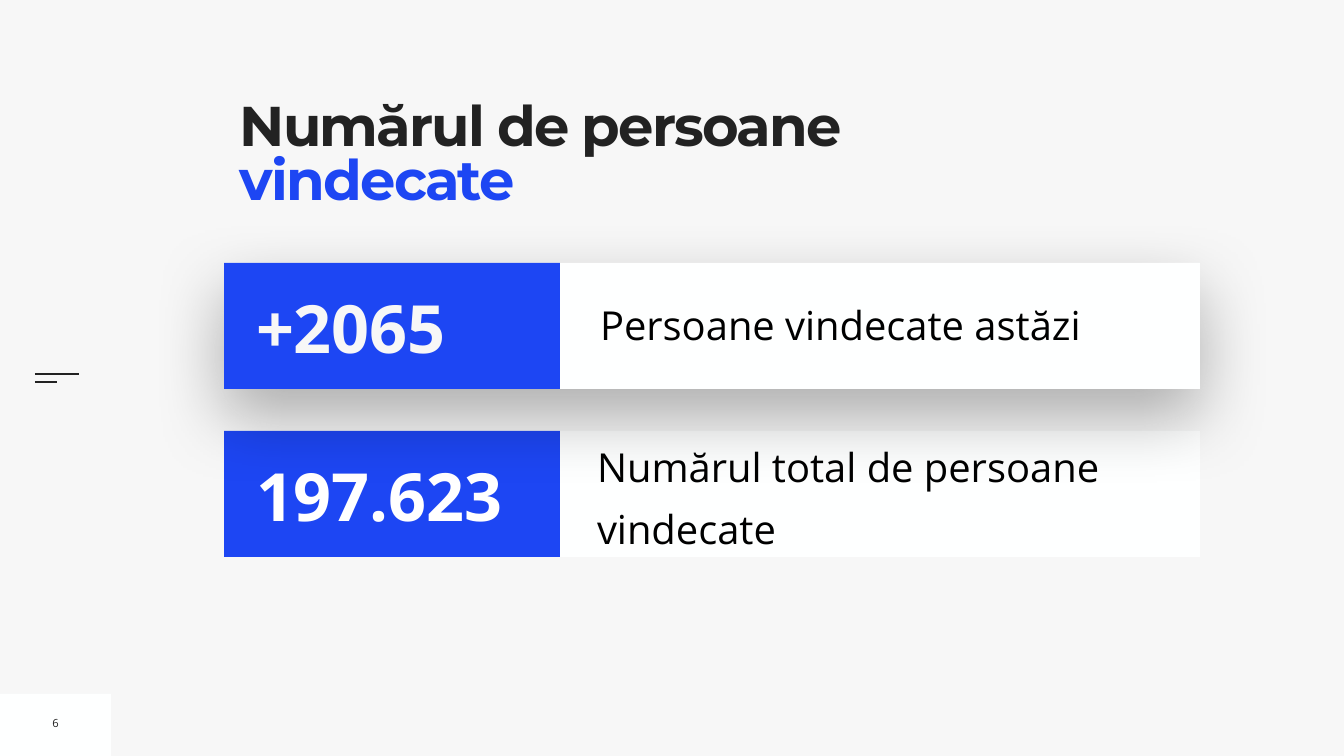
import pptx
import pptx.dml.color
import pptx.enum.shapes
import pptx.enum.text
import pptx.oxml
import pptx.oxml.ns
import pptx.util

SCALE = 914400 / 50.4
COLORS = {
    "background": "F7F7F7",
    "white": "FEFFFF",
    "number": "FFFFFF",
    "ink": "222222",
    "label": "000000",
    "accent": "1D46F3",
}
CARD_LEFT, CARD_WIDTH, CARD_HEIGHT, NUMBER_WIDTH = 224, 976, 126, 336


def px(length):
    """Turn pixels into EMU."""
    return pptx.util.Emu(round(length * SCALE))


def rgb(name):
    """Look up a named colour."""
    return pptx.dml.color.RGBColor.from_string(COLORS[name])


def add_panel(page, left, top, width, height, color):
    """Add a plain filled rectangle."""
    panel = page.shapes.add_shape(
        pptx.enum.shapes.MSO_SHAPE.RECTANGLE, px(left), px(top), px(width), px(height)
    )
    panel.shadow.inherit = False
    panel.fill.solid()
    panel.fill.fore_color.rgb = rgb(color)
    panel.line.fill.background()
    return panel


def add_soft_shadow(panel):
    """Give a panel a wide, soft shadow below it."""
    effects = panel._element.spPr.find(pptx.oxml.ns.qn("a:effectLst"))
    effects.append(pptx.oxml.parse_xml(
        f'<a:outerShdw {pptx.oxml.ns.nsdecls("a")} blurRad="{pptx.util.Pt(100)}" '
        f'dist="{pptx.util.Pt(40)}" dir="5400000" algn="ctr" rotWithShape="0">'
        '<a:srgbClr val="000000"><a:alpha val="30000"/></a:srgbClr></a:outerShdw>'
    ))


def add_rule(page, left, right, y):
    """Add a thin horizontal line."""
    rule = page.shapes.add_connector(
        pptx.enum.shapes.MSO_CONNECTOR.STRAIGHT, px(left), px(y), px(right), px(y)
    )
    rule.line.color.rgb = rgb("ink")
    rule.line.width = pptx.util.Pt(3)
    rule._element.spPr.append(
        pptx.oxml.parse_xml(f'<a:effectLst {pptx.oxml.ns.nsdecls("a")}/>')
    )


def add_text(page, left, top, width, height, text, size, color, bold=False, inset=5, wrap=True):
    """Add a vertically centred text box and return its paragraph."""
    box = page.shapes.add_textbox(px(left), px(top), px(width), px(height))
    frame = box.text_frame
    frame.word_wrap = wrap
    frame.vertical_anchor = pptx.enum.text.MSO_ANCHOR.MIDDLE
    frame.margin_left = frame.margin_right = px(inset)
    frame.margin_top = frame.margin_bottom = px(inset)
    para = frame.paragraphs[0]
    para.font.name = "Open Sans"
    para.font.size = pptx.util.Pt(size)
    para.font.bold = bold
    para.font.color.rgb = rgb(color)
    para.add_run().text = text
    return para


def add_title(page, parts):
    """Add the heading from pairs of text and colour."""
    box = add_panel(page, 240, 104, 656, 138, "background")
    frame = box.text_frame
    frame.word_wrap = True
    frame.vertical_anchor = pptx.enum.text.MSO_ANCHOR.TOP
    frame.margin_left = frame.margin_right = frame.margin_top = frame.margin_bottom = 0
    para = frame.paragraphs[0]
    para.alignment = pptx.enum.text.PP_ALIGN.LEFT
    para.line_spacing = 0.8
    para.font.name = "Montserrat"
    para.font.size = pptx.util.Pt(80)
    para.font.bold = True
    for text, color in parts:
        span = para.add_run()
        span.text = text
        span.font.color.rgb = rgb(color)
        span.font._element.set("spc", "-270")


def add_card(page, top, number, number_color, raised=False):
    """Add a white card with a number on a blue block."""
    card = add_panel(page, CARD_LEFT, top, CARD_WIDTH, CARD_HEIGHT, "white")
    if raised:
        add_soft_shadow(card)
    add_panel(page, CARD_LEFT, top, NUMBER_WIDTH, CARD_HEIGHT, "accent")
    add_text(page, CARD_LEFT + 27, top + 18, 304, 91, number, 95, number_color, bold=True)


def main():
    """Build and save the slide."""
    deck = pptx.Presentation()
    deck.slide_width, deck.slide_height = px(1344), px(756)
    page = deck.slides.add_slide(deck.slide_layouts[6])
    page.background.fill.solid()
    page.background.fill.fore_color.rgb = rgb("background")

    add_panel(page, 0, 694, 111, 62, "white")
    add_rule(page, 35, 79, 374)
    add_rule(page, 35, 57, 382)
    add_title(page, [("Numărul de persoane ", "ink"), ("vindecate", "accent")])
    folio = add_text(page, 47, 710, 17, 26, "6", 16, "ink", wrap=False)
    folio.alignment = pptx.enum.text.PP_ALIGN.CENTER

    add_card(page, 431, "197.623", "number")
    total = add_text(page, 597, 431, 602, 119, "Numărul total de persoane vindecate",
                     57, "label", inset=0)
    total.line_spacing = 1.3
    add_card(page, 263, "+2065", "background", raised=True)
    add_text(page, 595, 296, 593, 58, "Persoane vindecate astăzi", 57, "label")
    deck.save("out.pptx")


if __name__ == "__main__":
    main()
